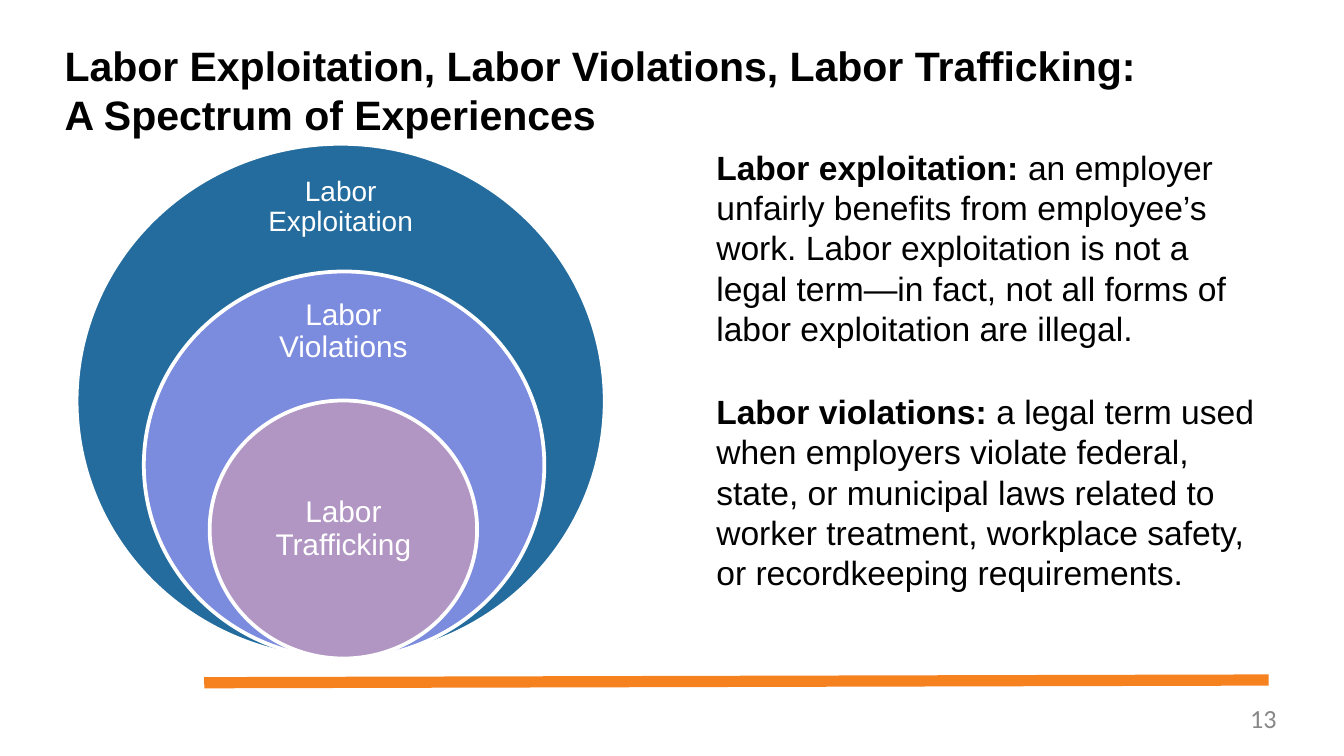
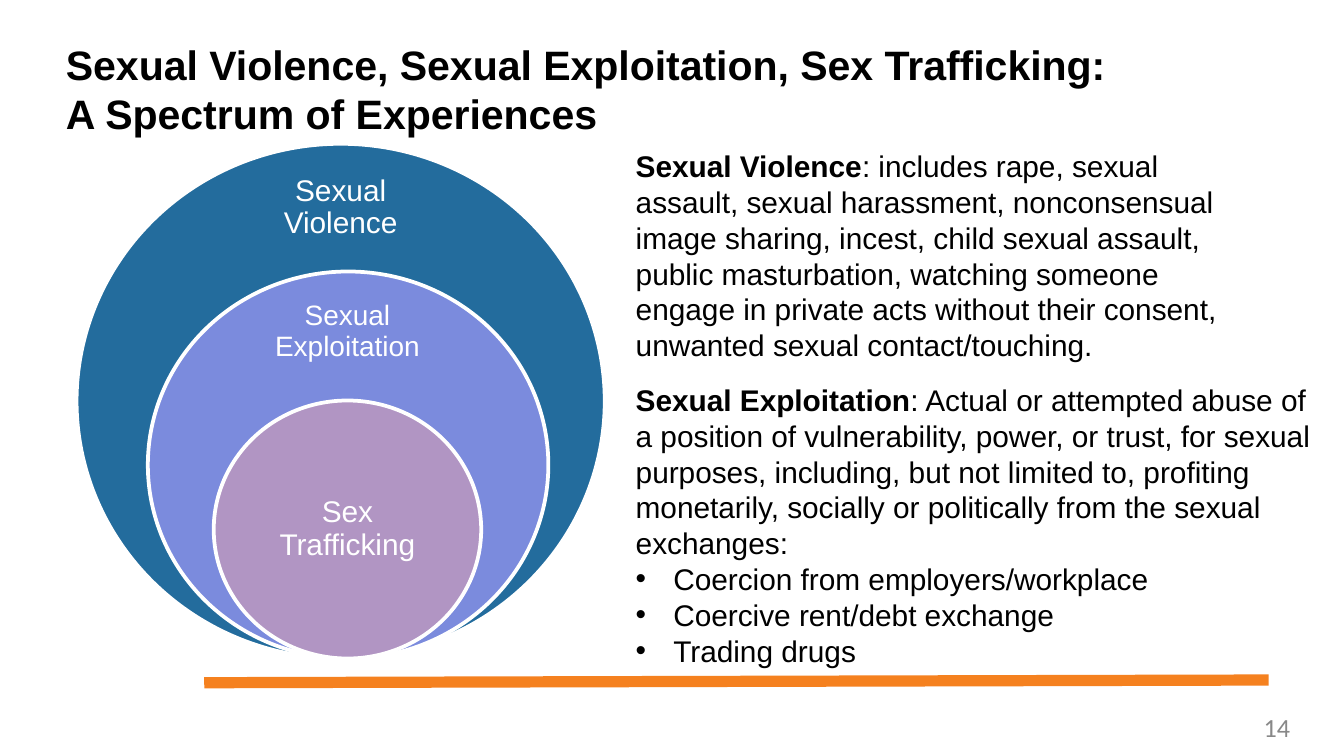
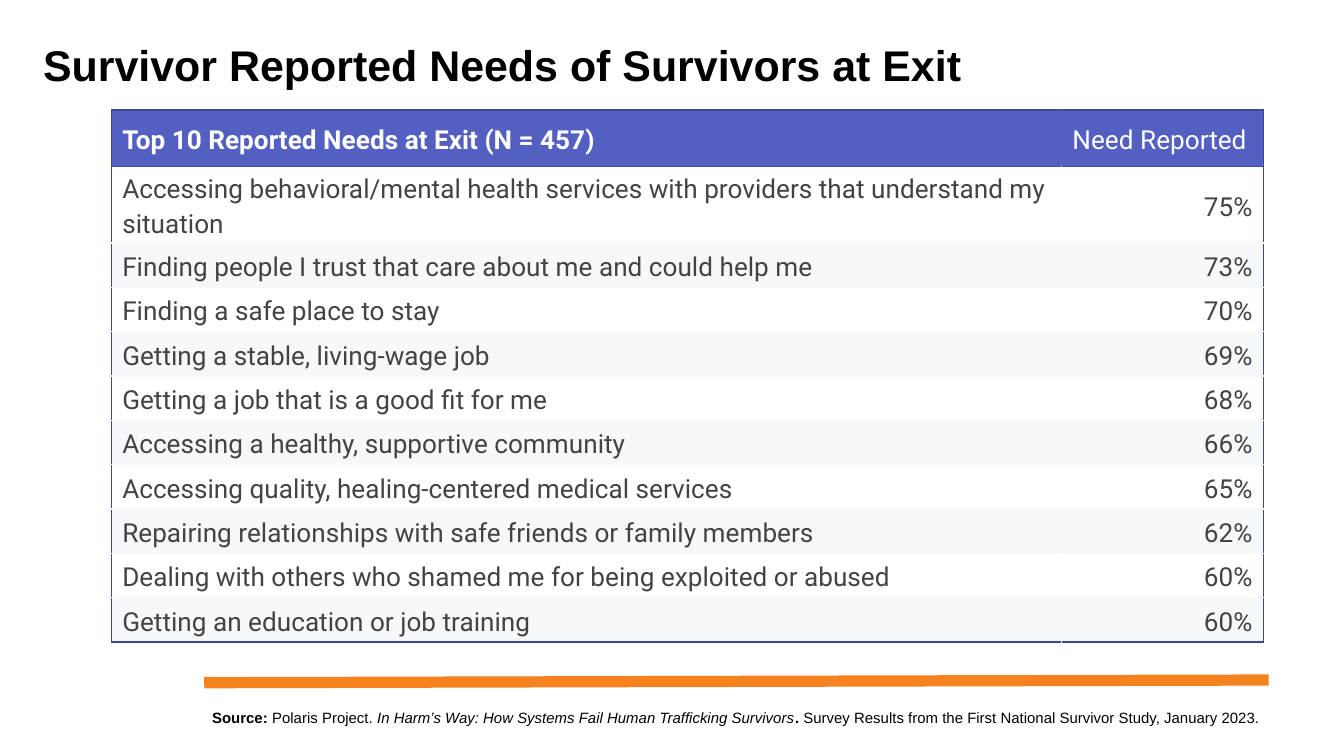
"""Build three slides on the spectrum of exploitation and survivor needs."""
from lxml.etree import SubElement
from pptx import Presentation
from pptx.dml.color import RGBColor
from pptx.enum.shapes import MSO_CONNECTOR, MSO_SHAPE
from pptx.enum.text import MSO_ANCHOR, MSO_AUTO_SIZE, PP_ALIGN
from pptx.oxml.ns import qn
from pptx.util import Inches, Pt

COLORS = {
    "ink": "000000", "white": "FFFFFF", "band": "F5811F", "number": "888888",
    "outer": "236C9D", "middle": "7B8BDD", "inner": "B195C3",
    "header": "535FC1", "outline": "3E4791", "stripe": "F6F8F9", "needs": "434343",
}
RGB = {name: RGBColor.from_string(value) for name, value in COLORS.items()}


def write(frame, paragraphs, size, color="ink", margins=(0, 0), align=PP_ALIGN.LEFT,
          anchor=MSO_ANCHOR.TOP, spacing=1.0, font="Arial", bold=None, bulleted=False):
    """Fill a text frame; a paragraph is a list of (text, bold, italic) runs."""
    frame.word_wrap = True
    frame.auto_size = MSO_AUTO_SIZE.NONE
    frame.vertical_anchor = anchor
    frame.margin_left = frame.margin_right = Inches(margins[0])
    frame.margin_top = frame.margin_bottom = Inches(margins[1])
    for index, runs in enumerate(paragraphs):
        paragraph = frame.add_paragraph() if index else frame.paragraphs[0]
        properties = paragraph._p.get_or_add_pPr()
        is_item = bulleted and index > 0
        properties.set("marL", str(Inches(0.28) if is_item else 0))
        properties.set("indent", str(Inches(-0.28) if is_item else 0))
        if is_item:
            SubElement(properties, qn("a:buChar")).set("char", "•")
        else:
            SubElement(properties, qn("a:buNone"))
        paragraph.alignment = align
        paragraph.line_spacing = spacing
        paragraph.space_before = Pt(0)
        paragraph.font.name = font
        paragraph.font.size = Pt(size)
        paragraph.font.bold = bold
        paragraph.font.color.rgb = RGB[color]
        for text, run_bold, run_italic in runs:
            run = paragraph.add_run()
            run.text = text
            run.font.bold = run_bold
            run.font.italic = run_italic


def start_slide(layout, heading, box, size):
    """Add a slide with its title and the orange band."""
    slide = deck.slides.add_slide(deck.slide_layouts.get_by_name(layout))
    title = slide.shapes.title
    title.left, title.top, title.width, title.height = map(Inches, box)
    write(title.text_frame, [[(line, None, None)] for line in heading], size, bold=True)
    band = slide.shapes.add_connector(
        MSO_CONNECTOR.STRAIGHT, Inches(1.52), Inches(5.08), Inches(9.44), Inches(5.06))
    band.line.color.rgb = RGB["band"]
    band.line.width = Pt(6)
    SubElement(band._element.spPr, qn("a:effectLst"))
    return slide


deck = Presentation()
deck.slide_width = Inches(10)
deck.slide_height = deck.slide_width * 9 // 16

spectrums = [
    {
        "heading": ["Labor Exploitation, Labor Violations, Labor Trafficking:",
                    "A Spectrum of Experiences"],
        "heading_box": (0.48, 0.3, 8.54, 0.38),
        "circles": [("Labor Exploitation", 15), ("Labor Violations", 16),
                    ("Labor Trafficking", 16)],
        "shift": 0,
        "size": 18,
        "definitions": [
            ((5.28, 1.06, 3.93, 1.57), [[
                ("Labor exploitation:", True, None),
                (" an employer unfairly benefits from employee’s work. Labor exploitation "
                 "is not a legal term—in fact, not all forms of labor exploitation are "
                 "illegal.", None, None)]]),
            ((5.28, 2.88, 4.22, 1.57), [[
                ("Labor violations: ", True, None),
                ("a legal term used when employers violate federal, state, or municipal "
                 "laws related to worker treatment, workplace safety, or recordkeeping "
                 "requirements.", None, None)]]),
        ],
        "number": ("13", (7.2, 5.23, 2.3, 0.24)),
    },
    {
        "heading": ["Sexual Violence, Sexual Exploitation, Sex Trafficking: "
                    "A Spectrum of Experiences"],
        "heading_box": (0.49, 0.29, 7.85, 0.44),
        "circles": [("Sexual Violence", 16), ("Sexual Exploitation", 15),
                    ("Sex Trafficking", 16)],
        "shift": 0.03,
        "size": 16,
        "definitions": [
            ((4.68, 1.07, 4.75, 1.94), [[
                ("Sexual Violence", True, None),
                (": includes rape, sexual assault, sexual harassment, nonconsensual image "
                 "sharing, incest, child sexual assault, public masturbation, watching "
                 "someone engage in private acts without their consent, unwanted sexual "
                 "contact/touching.", None, None)]]),
            ((4.68, 2.81, 5.14, 2.47), [
                [("Sexual Exploitation", True, None),
                 (": Actual or attempted abuse of a position of vulnerability, power, or "
                  "trust, for sexual purposes, including, but not limited to, profiting "
                  "monetarily, socially or politically from the sexual exchanges:",
                  None, None)],
                [("Coercion from employers/workplace", None, None)],
                [("Coercive rent/debt exchange", None, None)],
                [("Trading drugs", None, None)]]),
        ],
        "number": ("14", (8.07, 5.29, 1.53, 0.24)),
    },
]
rings = [
    ("outer", (0.57, 1.07, 3.93, 3.83), (1.85, 1.26, 1.37, 0.57)),
    ("middle", (1.07, 2.02, 2.98, 2.88), (1.86, 2.2, 1.39, 0.54)),
    ("inner", (1.56, 2.98, 1.99, 1.92), (1.85, 3.46, 1.41, 0.96)),
]

for spectrum in spectrums:
    slide = start_slide("Two Content", spectrum["heading"], spectrum["heading_box"], 22)
    for (ring, circle_box, label_box), (name, size) in zip(rings, spectrum["circles"]):
        shift = 0 if ring == "outer" else spectrum["shift"]
        left, *rest = circle_box
        circle = slide.shapes.add_shape(
            MSO_SHAPE.OVAL, Inches(left + shift), *map(Inches, rest))
        circle.shadow.inherit = False
        circle.fill.solid()
        circle.fill.fore_color.rgb = RGB[ring]
        circle.line.color.rgb = RGB["white"]
        circle.line.width = Pt(2)
        left, *rest = label_box
        label = slide.shapes.add_textbox(Inches(left + shift), *map(Inches, rest))
        write(label.text_frame, [[(name, None, None)]], size, "white", (0.12, 0.12),
              PP_ALIGN.CENTER, MSO_ANCHOR.MIDDLE, 0.9)
    for index, (box, paragraphs) in enumerate(spectrum["definitions"], 1):
        definition = slide.placeholders[index]
        definition.left, definition.top, definition.width, definition.height = map(Inches, box)
        write(definition.text_frame, paragraphs, spectrum["size"], margins=(0.05, 0.03),
              bulleted=True)
    number, box = spectrum["number"]
    page = slide.shapes.add_textbox(*map(Inches, box))
    write(page.text_frame, [[(number, None, None)]], 14, "number",
          align=PP_ALIGN.RIGHT, font="Calibri")

slide = start_slide("Title Only", ["Survivor Reported Needs of Survivors at Exit"],
                    (0.32, 0.29, 7.08, 0.39), 23)
source = slide.shapes.add_textbox(Inches(1.48), Inches(5.2), Inches(8.03), Inches(0.34))
write(source.text_frame, [[
    ("Source: ", True, None),
    ("Polaris Project. ", None, None),
    ("In Harm’s Way: How Systems Fail Human Trafficking Survivors", None, True),
    (".", True, None),
    (" Survey Results from the First National Survivor Study, January 2023.", None, None),
]], 8, margins=(0.1, 0.07))

needs = [
    ("Top 10 Reported Needs at Exit (N = 457)", "Need Reported"),
    ("Accessing behavioral/mental health services with providers that understand my situation",
     "75%"),
    ("Finding people I trust that care about me and could help me", "73%"),
    ("Finding a safe place to stay", "70%"),
    ("Getting a stable, living-wage job", "69%"),
    ("Getting a job that is a good fit for me", "68%"),
    ("Accessing a healthy, supportive community", "66%"),
    ("Accessing quality, healing-centered medical services", "65%"),
    ("Repairing relationships with safe friends or family members", "62%"),
    ("Dealing with others who shamed me for being exploited or abused", "60%"),
    ("Getting an education or job training", "60%"),
]
last = len(needs) - 1
table = slide.shapes.add_table(
    len(needs), 2, Inches(0.83), Inches(0.82), Inches(8.57), Inches(3.72)).table
table.horz_banding = False
table.columns[0].width, table.columns[1].width = Inches(7.07), Inches(1.5)
for row, texts in enumerate(needs):
    table.rows[row].height = Inches(0.33 if row else 0.42)
    fill = "header" if row == 0 else "white" if row % 2 else "stripe"
    for column, text in enumerate(texts):
        cell = table.cell(row, column)
        cell.vertical_anchor = MSO_ANCHOR.MIDDLE
        cell.margin_left = cell.margin_right = Inches(0.08)
        cell.margin_top = cell.margin_bottom = Inches(0.02)
        paragraph = cell.text_frame.paragraphs[0]
        paragraph.text = text
        paragraph.alignment = PP_ALIGN.RIGHT if row and column else PP_ALIGN.LEFT
        paragraph.line_spacing = 1.15
        paragraph.font.name = "Roboto"
        paragraph.font.size = Pt(14)
        paragraph.font.bold = row == 0 and column == 0
        paragraph.font.color.rgb = RGB["needs" if row else "white"]
        borders = {
            "lnL": fill if column else "outline",
            "lnR": "outline" if column else fill,
            "lnT": "outline" if row <= 1 else "stripe",
            "lnB": "outline" if row in (0, last) else "stripe",
        }
        for side, color in borders.items():
            border = SubElement(cell._tc.get_or_add_tcPr(), qn(f"a:{side}"), w=str(Pt(0.94)))
            solid = SubElement(border, qn("a:solidFill"))
            SubElement(solid, qn("a:srgbClr")).set("val", COLORS[color])
        cell.fill.solid()
        cell.fill.fore_color.rgb = RGB[fill]

deck.save("out.pptx")
